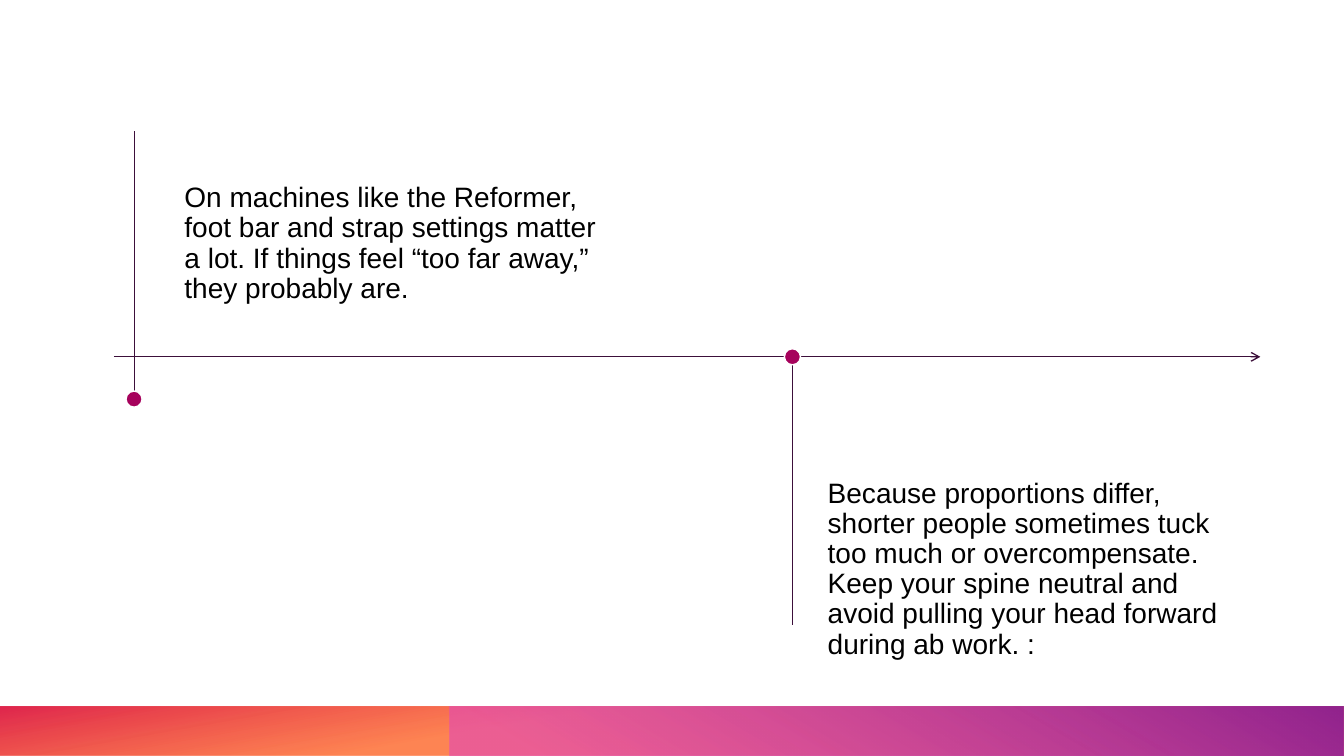
from pptx import Presentation
from pptx.dml.color import RGBColor
from pptx.enum.shapes import MSO_CONNECTOR, MSO_SHAPE
from pptx.oxml.ns import qn
from pptx.oxml.xmlchemy import OxmlElement
from pptx.util import Inches, Pt

COLORS = {
    "line": "3C0F3A",
    "dot": "A6025C",
    "white": "FFFFFF",
    "text": "000000",
    "orange": "FE4A00",
    "red": "DA002F",
    "pink": "E349BB",
    "purple": "92248E",
}


def rgb(name):
    return RGBColor.from_string(COLORS[name])


class Board:
    """Holds the style and the current slide."""

    font, size, spacing = "Arial", 20, 0.9
    dot_size = 0.16

    def __init__(self, slide):
        self.slide = slide

    def shape(self, kind, *box):
        item = self.slide.shapes.add_shape(kind, *map(Inches, box))
        item.shadow.inherit = False
        return item

    def band(self, left, width, angle, stops):
        """Footer bar; stops are (percent, color, opacity percent)."""
        bar = self.shape(MSO_SHAPE.RECTANGLE, left, 7.01, width, 0.49)
        bar.line.fill.background()
        bar.fill.gradient()
        bar.fill.gradient_angle = angle
        for stop, (place, color, _) in zip(bar.fill.gradient_stops, stops):
            stop.position = place / 100
            stop.color.rgb = rgb(color)
        fills = bar._element.spPr.iter(qn("a:srgbClr"))
        for fill, (_, _, opacity) in zip(fills, stops):
            alpha = OxmlElement("a:alpha")
            alpha.set("val", str(opacity * 1000))
            fill.append(alpha)

    def line(self, x1, y1, x2, y2, width, arrow=False):
        item = self.slide.shapes.add_connector(
            MSO_CONNECTOR.STRAIGHT, *map(Inches, (x1, y1, x2, y2)))
        item.line.color.rgb = rgb("line")
        item.line.width = Pt(width)
        if arrow:
            tip = OxmlElement("a:tailEnd")
            tip.set("type", "arrow")
            item.line._get_or_add_ln().append(tip)
        item._element.spPr.append(OxmlElement("a:effectLst"))

    def dot(self, x, y):
        half = self.dot_size / 2
        item = self.shape(MSO_SHAPE.OVAL, x - half, y - half,
                          self.dot_size, self.dot_size)
        item.fill.solid()
        item.fill.fore_color.rgb = rgb("dot")
        item.line.color.rgb = rgb("white")
        item.line.width = Pt(1)

    def text(self, words, *box):
        frame = self.slide.shapes.add_textbox(*map(Inches, box)).text_frame
        frame.word_wrap = True
        frame.margin_left = frame.margin_right = 0
        frame.margin_top = frame.margin_bottom = 0
        para = frame.paragraphs[0]
        para.line_spacing = self.spacing
        run = para.add_run()
        run.text = words
        run.font.name = self.font
        run.font.size = Pt(self.size)
        run.font.color.rgb = rgb("text")


def main():
    deck = Presentation()
    deck.slide_width, deck.slide_height = Inches(13.33), Inches(7.5)
    board = Board(deck.slides.add_slide(deck.slide_layouts[6]))

    # Footer bands
    board.band(0, 13.33, 100, [(62, "orange", 67), (100, "red", 85)])
    board.band(4.46, 8.87, 60, [(9, "pink", 62), (99, "purple", 100)])

    # Time axis
    axis = 3.54
    board.line(1.13, axis, 12.5, axis, 0.95, arrow=True)

    # Tips: words, text box, stem x, stem top, stem bottom, dot y
    tips = [
        ("On machines like the Reformer, foot bar and strap settings matter "
         "a lot. If things feel “too far away,” they probably are.",
         (1.83, 1.82, 4.13, 1.71), 1.33, 1.3, 3.96, 3.96),
        ("Because proportions differ, shorter people sometimes tuck too much "
         "or overcompensate. Keep your spine neutral and avoid pulling your "
         "head forward during ab work. :",
         (8.21, 4.75, 4.13, 1.45), 7.86, axis, 6.2, axis),
    ]
    for words, box, x, top, bottom, y in tips:
        board.text(words, *box)
        board.line(x, top, x, bottom, 0.5)
        board.dot(x, y)

    deck.save("out.pptx")


if __name__ == "__main__":
    main()
